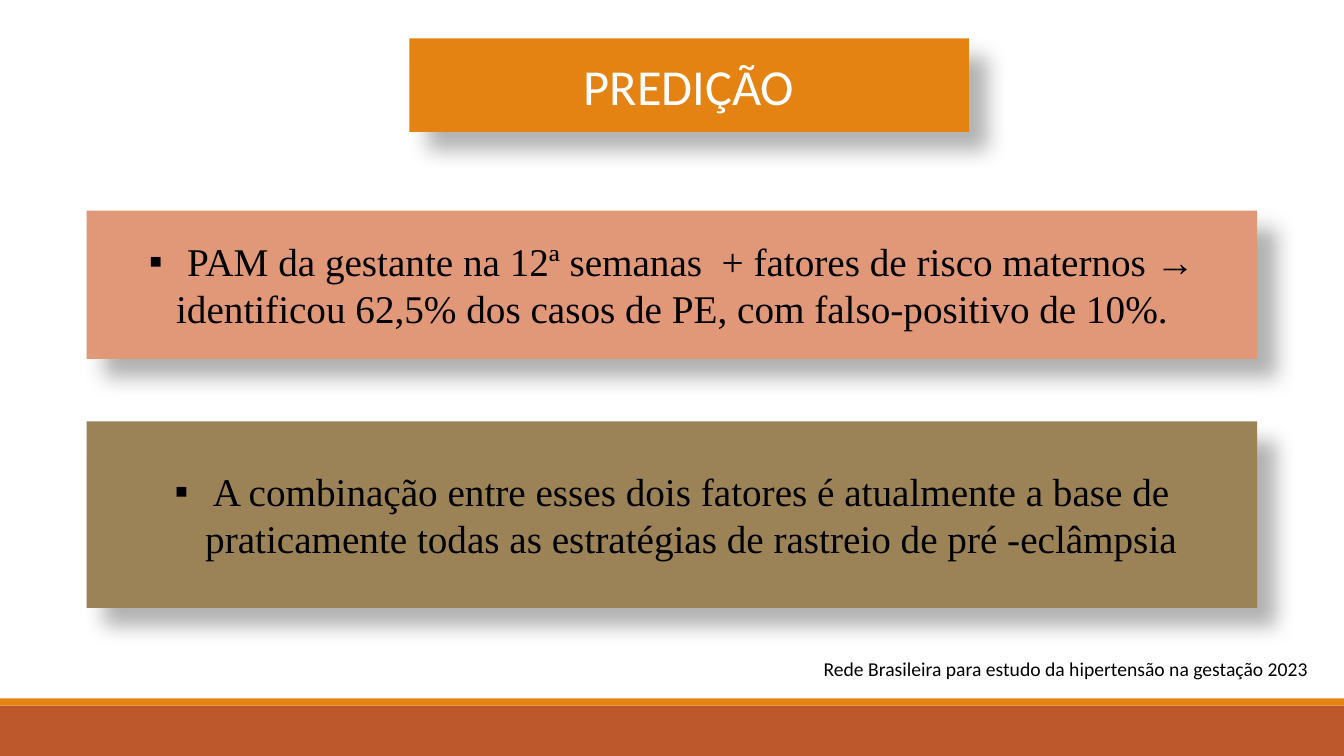
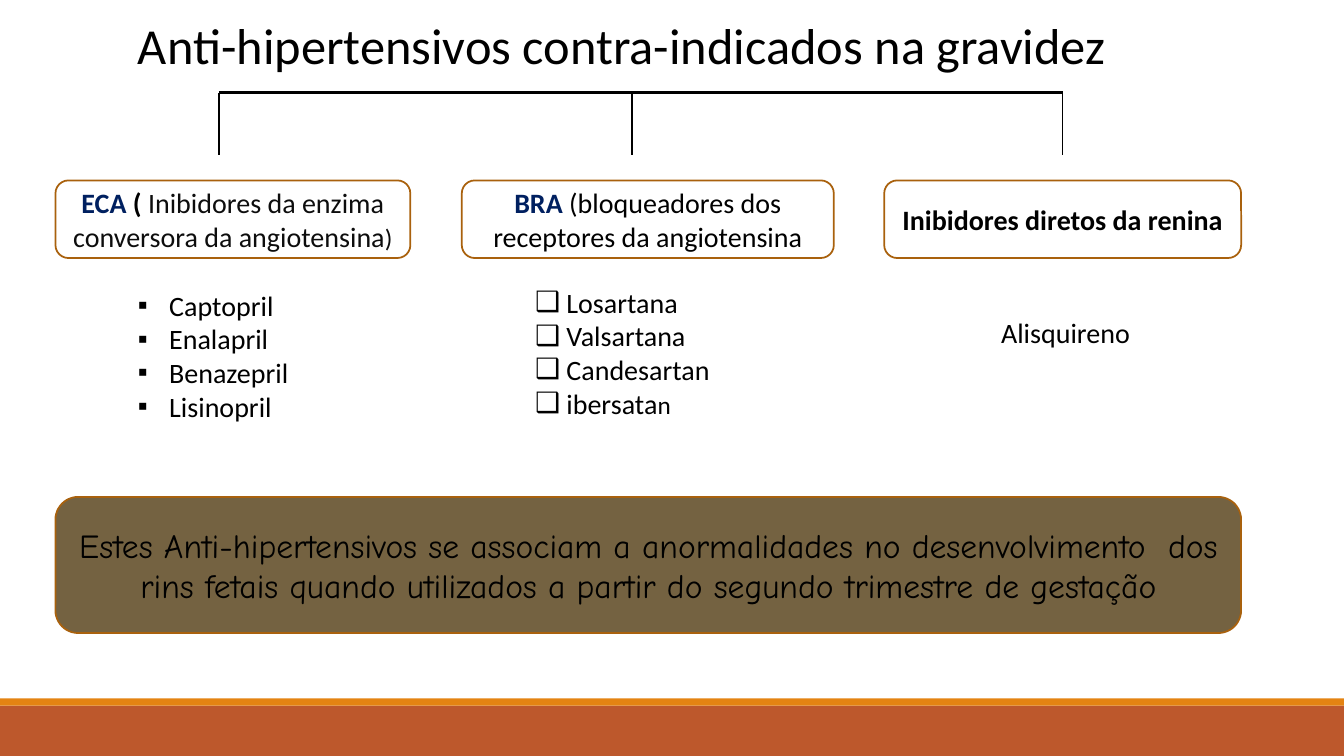
"""Build two slides on pre-eclampsia prediction and contraindicated drugs."""
import pptx
import pptx.dml.color
import pptx.enum.shapes
import pptx.enum.text
import pptx.oxml.ns
import pptx.util
from lxml import etree

PX = 9144
SLIDE_WIDTH, SLIDE_HEIGHT = 1333, 750
COLORS = {
    "band": "BD582C",
    "accent": "E48312",
    "salmon": "E09878",
    "olive": "9B8357",
    "dark_olive": "746241",
    "outline": "A9610D",
    "navy": "002060",
    "soft_black": "0D0D0D",
    "black": "000000",
    "white": "FFFFFF",
}
BODY_FONT, SERIF_FONT, NOTE_FONT = "Calibri", "Times New Roman", "Comic Neue"
SHAPES = pptx.enum.shapes.MSO_SHAPE
ALIGN = pptx.enum.text.PP_ALIGN
ANCHOR = pptx.enum.text.MSO_ANCHOR


def to_emu(values):
    """Turn px lengths into EMU."""
    return [pptx.util.Emu(value * PX) for value in values]


def rgb(name):
    """Return the named colour."""
    return pptx.dml.color.RGBColor.from_string(COLORS[name])


def add_child(parent, tag, **attributes):
    """Append a DrawingML element to its parent."""
    element = etree.SubElement(parent, pptx.oxml.ns.qn(tag))
    for key, value in attributes.items():
        element.set(key, str(value))
    return element


def format_run(run, size, color="black", font=BODY_FONT, bold=False):
    """Apply the character format to one run."""
    run.font.size = pptx.util.Pt(size)
    run.font.name = font
    run.font.bold = bold
    run.font.color.rgb = rgb(color)


def set_bullet(paragraph, character, indent):
    """Give the paragraph a hanging bullet."""
    properties = paragraph._p.get_or_add_pPr()
    properties.set("marL", str(indent * PX))
    properties.set("indent", str(-indent * PX))
    add_child(properties, "a:buFont", typeface="Arial")
    add_child(properties, "a:buChar", char=character)


def write_lines(shape, lines, align=ALIGN.LEFT, **style):
    """Write plain lines in one style and return their paragraphs."""
    shape.text_frame.text = "\n".join(lines)
    for paragraph in shape.text_frame.paragraphs:
        paragraph.alignment = align
        for run in paragraph.runs:
            format_run(run, **style)
    return shape.text_frame.paragraphs


def add_panel(slide, box, fill, outline=None, kind=SHAPES.RECTANGLE):
    """Add a filled shape with middle-anchored text."""
    shape = slide.shapes.add_shape(kind, *to_emu(box))
    shape.shadow.inherit = False
    shape.fill.solid()
    shape.fill.fore_color.rgb = rgb(fill)
    if outline:
        shape.line.color.rgb = rgb(outline)
        shape.line.width = pptx.util.Pt(1.25)
    else:
        shape.line.fill.background()
    shape.text_frame.word_wrap = True
    shape.text_frame.vertical_anchor = ANCHOR.MIDDLE
    return shape


def add_raised_panel(slide, box, fill):
    """Add a panel with a soft shadow to the lower right."""
    shape = add_panel(slide, box, fill)
    effects = shape._element.spPr.find(pptx.oxml.ns.qn("a:effectLst"))
    shadow = add_child(effects, "a:outerShdw", blurRad=190500, dist=228600,
                       dir=2700000, algn="tl", rotWithShape=0)
    color = add_child(shadow, "a:srgbClr", val=COLORS["black"])
    add_child(color, "a:alpha", val=30000)
    return shape


def add_text(slide, box, lines, size):
    """Add a wrapped text box and return its paragraphs."""
    shape = slide.shapes.add_textbox(*to_emu(box))
    shape.text_frame.word_wrap = True
    return write_lines(shape, lines, size=size)


def add_line(slide, points, width):
    """Add a straight black line."""
    line = slide.shapes.add_connector(
        pptx.enum.shapes.MSO_CONNECTOR.STRAIGHT, *to_emu(points))
    line.line.color.rgb = rgb("black")
    line.line.width = pptx.util.Pt(width)
    add_child(line._element.spPr, "a:effectLst")


def add_base_slide(presentation):
    """Add a blank slide with the bands at its foot."""
    slide = presentation.slides.add_slide(presentation.slide_layouts[6])
    for top, height, color in ((700, 50, "band"), (693, 7, "accent")):
        add_panel(slide, (0, top, SLIDE_WIDTH, height), color)
    return slide


def add_statement(slide, box, fill, lines):
    """Add a raised panel whose first line has a bullet."""
    shape = add_raised_panel(slide, box, fill)
    paragraphs = write_lines(shape, lines, ALIGN.CENTER, size=28, font=SERIF_FONT)
    set_bullet(paragraphs[0], "▪", 38)


def add_bracket(slide, box, stems):
    """Add a bar with a stem down at each offset and width given."""
    left, top, width, height = box
    add_line(slide, (left, top, left + width, top), 2.25)
    for offset, weight in stems:
        x = left + offset
        add_line(slide, (x, top, x, top + height), weight)


def add_drug_class(slide, box, heading, drugs, offset, bullet=None):
    """Add a class heading and, at an offset from it, its list of drugs."""
    left, top, width, height = box
    shape = add_panel(slide, box, "white", "outline", SHAPES.ROUNDED_RECTANGLE)
    paragraph = shape.text_frame.paragraphs[0]
    paragraph.alignment = ALIGN.CENTER
    for text, style in heading:
        run = paragraph.add_run()
        run.text = text
        format_run(run, **{"size": 20, **style})
    right, down = offset
    list_box = (left + right, top + down, width - right, 145)
    paragraphs = add_text(slide, list_box, drugs, 20)
    if bullet:
        for paragraph in paragraphs:
            set_bullet(paragraph, bullet, 31)
    return paragraphs


def build_prediction(presentation):
    """Build the slide on prediction."""
    slide = add_base_slide(presentation)
    left, width = 86, 1161
    add_statement(slide, (left, 209, width, 147), "salmon", [
        "PAM da gestante na 12ª semanas  + fatores de risco maternos →",
        "identificou 62,5% dos casos de PE, com falso-positivo de 10%."])
    add_statement(slide, (left, 418, width, 185), "olive", [
        "A combinação entre esses dois fatores é atualmente a base de "
        "praticamente todas as estratégias de rastreio de pré -eclâmpsia"])
    title = add_raised_panel(slide, (406, 38, 555, 93), "accent")
    write_lines(title, ["PREDIÇÃO"], ALIGN.CENTER, size=36, color="white")
    add_text(slide, (807, 647, 526, 34),
             ["Rede Brasileira para estudo da hipertensão na gestação 2023"], 14)


def build_contraindications(presentation):
    """Build the slide on contraindicated drugs."""
    slide = add_base_slide(presentation)
    add_text(slide, (127, 9, 1068, 71),
             ["Anti-hipertensivos contra-indicados na gravidez"], 36)
    add_bracket(slide, (217, 92, 837, 62), ((0, 1.5), (410, 1), (837, 1)))
    top, height = 179, 77
    key = {"color": "navy", "bold": True}
    add_drug_class(
        slide, (55, top, 352, height),
        [("ECA ", key), ("( ", {"bold": True}),
         ("Inibidores da enzima conversora da angiotensina",
          {"color": "soft_black"}),
         (")", {"color": "soft_black", "size": 18})],
        ["Captopril", "Enalapril", "Benazepril", "Lisinopril"], (72, 102), "▪")
    sartans = add_drug_class(
        slide, (458, top, 369, height),
        [("BRA ", key), ("(bloqueadores dos receptores da angiotensina", {})],
        ["Losartana", "Valsartana", "Candesartan", "ibersata"], (63, 99), "❑")
    last_letter = sartans[-1].add_run()
    last_letter.text = "n"
    format_run(last_letter, 18)
    add_drug_class(
        slide, (877, top, 354, height),
        [("Inibidores diretos da renina", {"bold": True})],
        ["Alisquireno"], (106, 129))
    warning = add_panel(slide, (55, 493, 1176, 135), "dark_olive", "outline",
                        SHAPES.ROUNDED_RECTANGLE)
    write_lines(warning, [
        "Estes Anti-hipertensivos se associam a anormalidades no "
        "desenvolvimento  dos rins fetais quando utilizados a partir do "
        "segundo trimestre de gestação"], ALIGN.CENTER, size=24, font=NOTE_FONT)


def main():
    """Build and save the presentation."""
    presentation = pptx.Presentation()
    presentation.slide_width, presentation.slide_height = to_emu(
        (SLIDE_WIDTH, SLIDE_HEIGHT))
    build_prediction(presentation)
    build_contraindications(presentation)
    presentation.save("out.pptx")


if __name__ == "__main__":
    main()
